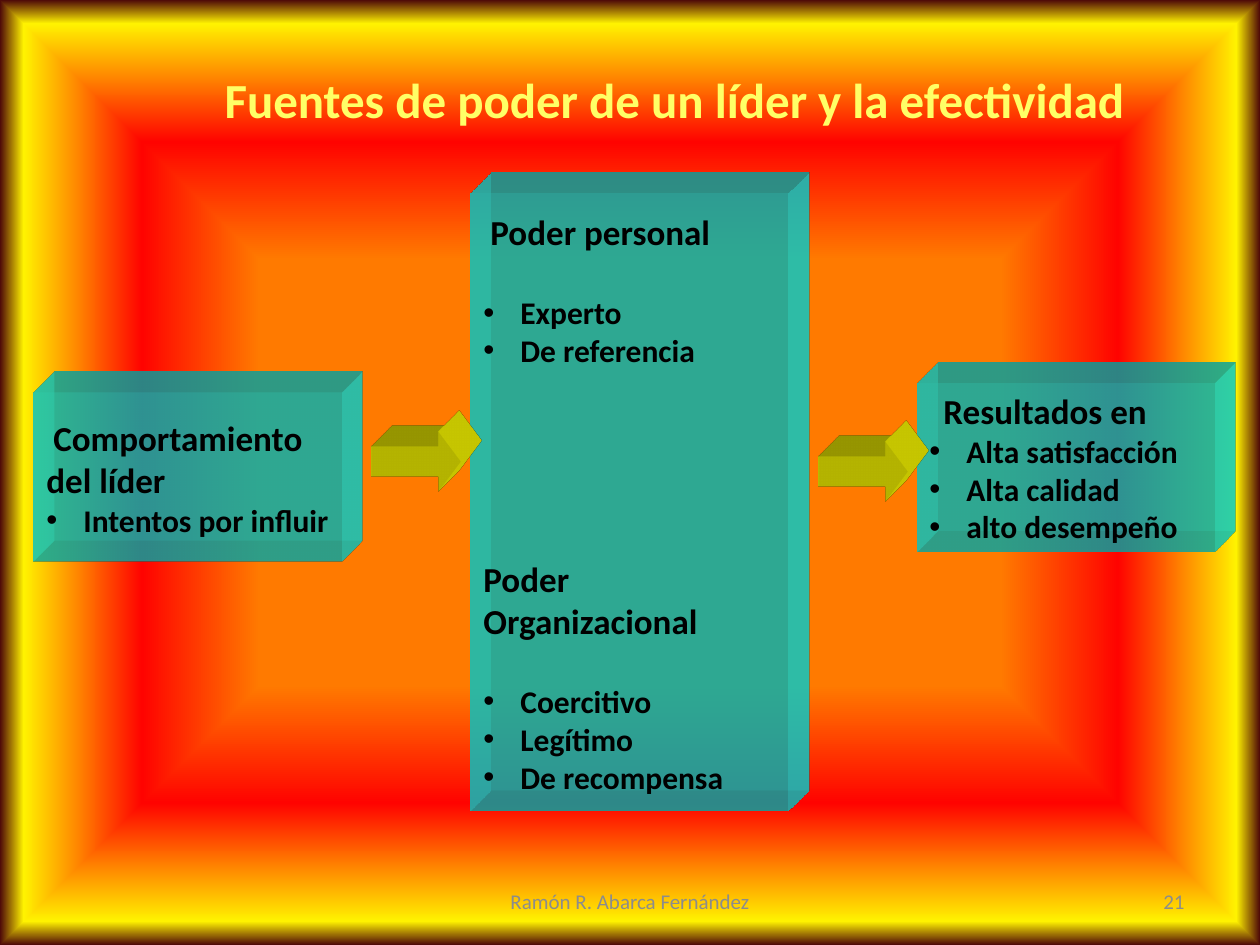
from dataclasses import dataclass

import lxml.etree
import pptx
import pptx.dml.color
import pptx.enum.shapes
import pptx.enum.text
import pptx.oxml
import pptx.oxml.ns
import pptx.util

PX = 914400 / 126
FONT = "Calibri"
BLACK, GRAY, TITLE_YELLOW = "000000", "8C8C8C", "FFFF66"
CYAN, YELLOW = "00FFFF", "FFFF00"
BULLET_INDENT = 37
NS = 'xmlns:a="http://schemas.openxmlformats.org/drawingml/2006/main"'
BACKGROUND_STOPS = [(0, "FF7A00"), (45, "FF7A00"), (70, "FF0300"),
                    (95, "FFF200"), (100, "4D0808")]

Align = pptx.enum.text.PP_ALIGN
Anchor = pptx.enum.text.MSO_ANCHOR
Shape = pptx.enum.shapes.MSO_SHAPE


@dataclass
class Line:
    text: str
    bullet: bool = False
    indent: int = 0
    before: float = 0


@dataclass
class Box:
    x: int
    y: int
    w: int
    h: int
    lines: list[Line]
    anchor: Anchor = Anchor.MIDDLE
    inset_top: int = 6


BOXES = [
    Box(471, 194, 318, 617, [
        Line("Poder personal", indent=7),
        Line("Experto", bullet=True, before=23),
        Line("De referencia", bullet=True),
        Line("Poder", before=108),
        Line("Organizacional"),
        Line("Coercitivo", bullet=True, before=23),
        Line("Legítimo", bullet=True),
        Line("De recompensa", bullet=True),
    ], Anchor.TOP, 17),
    Box(34, 393, 308, 169, [
        Line("Comportamiento", indent=7),
        Line("del líder"),
        Line("Intentos por influir", bullet=True),
    ]),
    Box(917, 383, 298, 169, [
        Line("Resultados en", indent=14),
        Line("Alta satisfacción", bullet=True),
        Line("Alta calidad", bullet=True),
        Line("alto desempeño", bullet=True),
    ]),
]
ARROWS = [(372, 432), (819, 442)]
ARROW_SIZE = (89, 60)


def px(n: float) -> int:
    return round(n * PX)


def rgb(color: str) -> pptx.dml.color.RGBColor:
    return pptx.dml.color.RGBColor.from_string(color)


def write(p, text: str, *, size: float, color: str = BLACK, bold: bool = False,
          align: Align = Align.LEFT, indent: int = 0, bullet: bool = False,
          before: float = 0) -> None:
    p.alignment = align
    p.space_before = pptx.util.Pt(before)
    p_pr = p._p.get_or_add_pPr()
    p_pr.set("marL", str(px(indent)))
    p_pr.set("indent", str(-px(indent) if bullet else 0))
    if bullet:
        p_pr.append(pptx.oxml.parse_xml(f'<a:buFont {NS} typeface="Arial"/>'))
        p_pr.append(pptx.oxml.parse_xml(f'<a:buChar {NS} char="•"/>'))
    r = p.add_run()
    r.text = text
    r.font.name = FONT
    r.font.size = pptx.util.Pt(size)
    r.font.bold = bold
    r.font.color.rgb = rgb(color)


def set_background(slide) -> None:
    slide.background.fill.gradient()
    old = slide.element.find(".//" + pptx.oxml.ns.qn("a:gradFill"))
    stops = "".join(f'<a:gs pos="{pos * 1000}"><a:srgbClr val="{color}"/></a:gs>'
                    for pos, color in BACKGROUND_STOPS)
    new = pptx.oxml.parse_xml(
        f'<a:gradFill {NS} rotWithShape="0"><a:gsLst>{stops}</a:gsLst>'
        '<a:path path="rect"><a:fillToRect l="50000" t="50000" r="50000" b="50000"/>'
        '</a:path></a:gradFill>')
    old.getparent().replace(old, new)


def extrude(sp, color: str) -> None:
    """Give the shape a solid depth towards the top right."""
    sp_pr = sp._element.spPr
    sp_pr.append(pptx.oxml.parse_xml(
        f'<a:scene3d {NS}><a:camera prst="legacyObliqueTopRight"/>'
        '<a:lightRig rig="legacyFlat3" dir="b"/></a:scene3d>'))
    sp_pr.append(pptx.oxml.parse_xml(
        f'<a:sp3d {NS} extrusionH="430200" prstMaterial="legacyMatte">'
        '<a:bevelT w="13500" h="13500" prst="angle"/>'
        '<a:bevelB w="13500" h="13500" prst="angle"/>'
        f'<a:extrusionClr><a:srgbClr val="{color}"/></a:extrusionClr></a:sp3d>'))


def add_solid(slide, kind: Shape, x: int, y: int, w: int, h: int,
              color: str, opacity: int = 100):
    sp = slide.shapes.add_shape(kind, px(x), px(y), px(w), px(h))
    sp.shadow.inherit = False
    sp.fill.solid()
    sp.fill.fore_color.rgb = rgb(color)
    if opacity < 100:
        clr = sp._element.spPr.find(".//" + pptx.oxml.ns.qn("a:srgbClr"))
        alpha = lxml.etree.SubElement(clr, pptx.oxml.ns.qn("a:alpha"))
        alpha.set("val", str(opacity * 1000))
    sp.line.fill.background()
    extrude(sp, color)
    return sp


def add_box(slide, box: Box) -> None:
    sp = add_solid(slide, Shape.RECTANGLE, box.x, box.y, box.w, box.h, CYAN, 58)
    tf = sp.text_frame
    tf.word_wrap = True
    tf.vertical_anchor = box.anchor
    tf.margin_top = px(box.inset_top)
    tf.margin_right = 0
    for i, line in enumerate(box.lines):
        p = tf.add_paragraph() if i else tf.paragraphs[0]
        write(p, line.text, size=18 if line.bullet else 20, bold=True,
              bullet=line.bullet, before=line.before,
              indent=BULLET_INDENT if line.bullet else line.indent)


def add_footer(slide, text: str, x: int, w: int, align: Align) -> None:
    sp = slide.shapes.add_textbox(px(x), px(876), px(w), px(50))
    sp.text_frame.word_wrap = True
    sp.text_frame.vertical_anchor = Anchor.MIDDLE
    write(sp.text_frame.paragraphs[0], text, size=12, color=GRAY, align=align)


def add_title(slide, text: str) -> None:
    title = slide.shapes.title
    title.left, title.top, title.width, title.height = map(px, (203, 64, 960, 69))
    tf = title.text_frame
    tf.auto_size = pptx.enum.text.MSO_AUTO_SIZE.NONE
    tf.vertical_anchor = Anchor.MIDDLE
    write(tf.paragraphs[0], text, size=28, color=TITLE_YELLOW, bold=True, indent=9)


def main() -> None:
    prs = pptx.Presentation()
    prs.slide_width, prs.slide_height = px(1260), px(945)
    slide = prs.slides.add_slide(prs.slide_layouts[5])
    set_background(slide)
    for box in BOXES:
        add_box(slide, box)
    for x, y in ARROWS:
        arrow = add_solid(slide, Shape.RIGHT_ARROW, x, y, *ARROW_SIZE, YELLOW)
        arrow.adjustments[0], arrow.adjustments[1] = 0.5, 0.375
    add_title(slide, "Fuentes de poder de un líder y la efectividad")
    add_footer(slide, "21", 903, 294, Align.RIGHT)
    add_footer(slide, "Ramón R. Abarca Fernández", 430, 400, Align.CENTER)
    prs.save("out.pptx")


if __name__ == "__main__":
    main()
